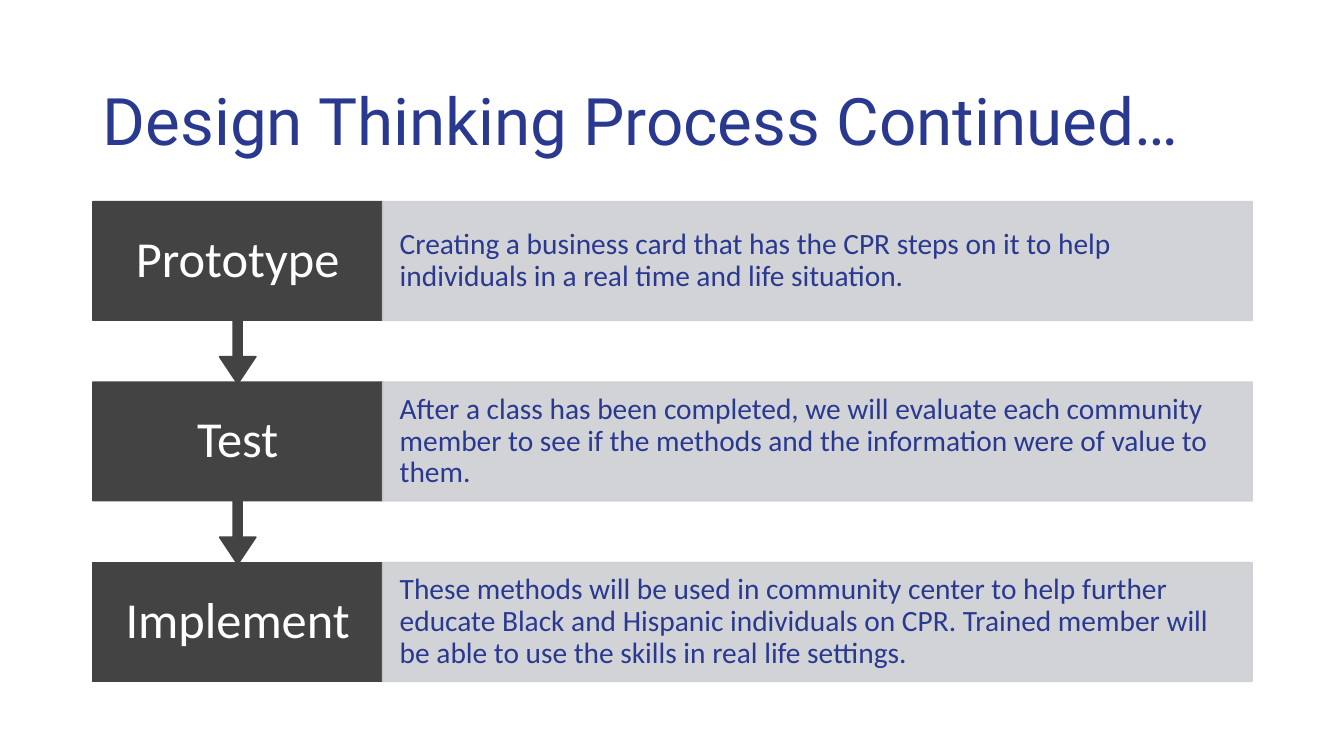
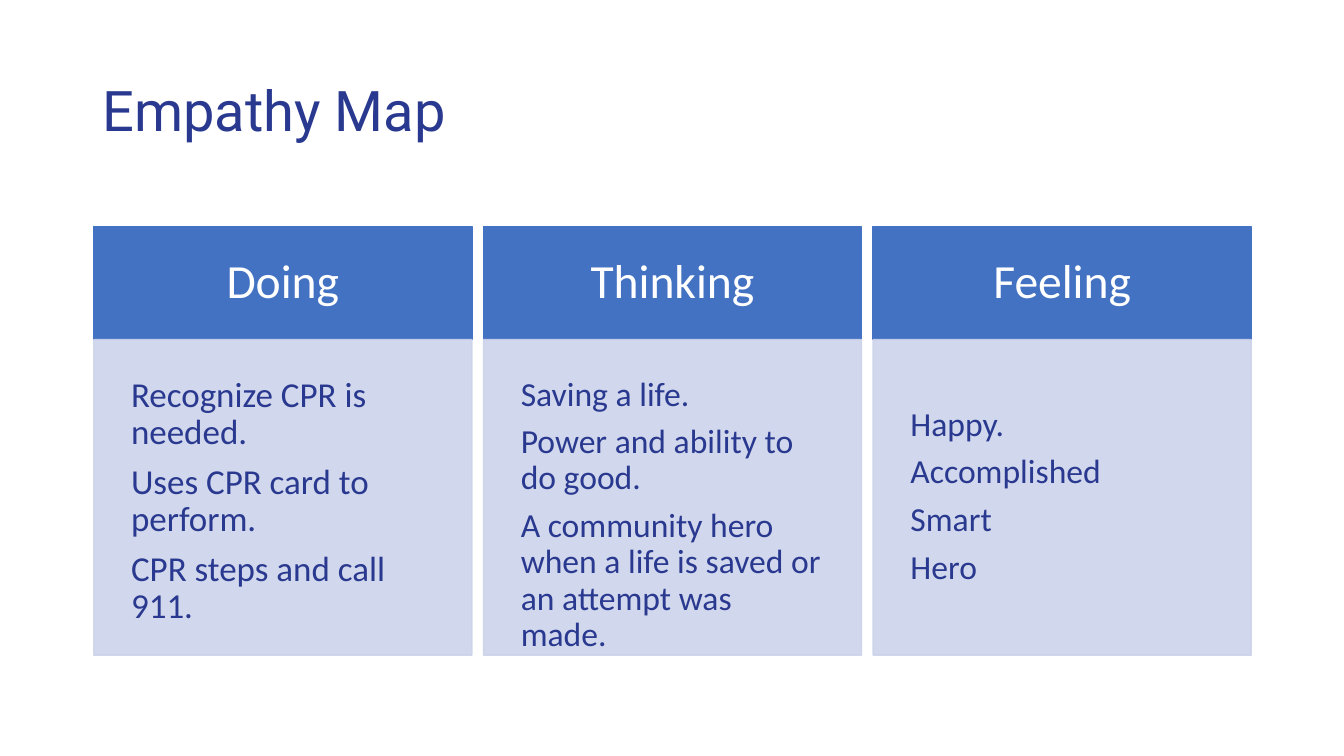
import dataclasses

import pptx
import pptx.dml.color
import pptx.enum.shapes
import pptx.enum.text
import pptx.oxml.ns
import pptx.util
from lxml import etree

SHAPES = pptx.enum.shapes.MSO_SHAPE
ALIGN = pptx.enum.text.PP_ALIGN
ANCHOR = pptx.enum.text.MSO_ANCHOR

# Shared look
INK, WHITE = "2A3990", "FFFFFF"
STEP_DARK, STEP_PALE = "434343", "CDCFD3"
MAP_BLUE, MAP_PALE = "4372C3", "CCD3EA"
TITLE_FONT, BODY_FONT = "Roboto", "Calibri"
PALE_OPACITY = 90
SLIDE_W, SLIDE_H = 13.33, 7.5
MARGIN, CONTENT_W = 0.92, 11.5
TITLE_BOTTOM = 1.85

# Process grid: label takes a quarter of each row, the text the rest
LABEL_W = CONTENT_W / 4
STEP_TOP, STEP_H, STEP_PITCH = 2.0, 1.18, 1.79
CALLOUT_H = 1.81
CALLOUT_SHAPE = (0.05, 0.1, 0.15, 0.65)

# Empathy grid: equal columns with a narrow gap
MAP_LEFT, MAP_TOP = 0.93, 2.25
COLUMN_W, COLUMN_GAP = 3.75, 0.115
HEAD_H, LIST_H = 1.12, 3.13
LIST_INSET = 0.37


@dataclasses.dataclass(frozen=True)
class Box:
    left: float
    top: float
    width: float
    height: float

    def emu(self) -> list[int]:
        return [pptx.util.Inches(v) for v in dataclasses.astuple(self)]


@dataclasses.dataclass(frozen=True)
class TextStyle:
    size: float
    color: str = INK
    font: str = BODY_FONT
    align: ALIGN = ALIGN.LEFT
    anchor: ANCHOR = ANCHOR.MIDDLE
    inset_x: float = 0.1
    inset_y: float = 0.05


@dataclasses.dataclass(frozen=True)
class Step:
    name: str
    detail: str


@dataclasses.dataclass(frozen=True)
class MapColumn:
    heading: str
    points: tuple[str, ...]
    size: float
    drop: float = 0


STEP_LABEL = TextStyle(36, WHITE, align=ALIGN.CENTER, inset_x=0.2, inset_y=0.28)
STEP_DETAIL = TextStyle(21, inset_x=0.17, inset_y=0.21)
MAP_HEADING = TextStyle(34, WHITE, align=ALIGN.CENTER, inset_x=0.3, inset_y=0.3)

STEPS = (
    Step("Prototype", "Creating a business card that has the CPR steps on it to "
         "help individuals in a real time and life situation."),
    Step("Test", "After a class has been completed, we will evaluate each "
         "community member to see if the methods and the information were of "
         "value to them."),
    Step("Implement", "These methods will be used in community center to help "
         "further educate Black and Hispanic individuals on CPR. Trained member "
         "will be able to use the skills in real life settings."),
)
MAP_COLUMNS = (
    MapColumn("Doing", ("Recognize CPR is needed.", "Uses CPR card to perform.",
                        "CPR steps and call 911."), 25),
    MapColumn("Thinking", ("Saving a life.", "Power and ability to do good.",
                           "A community hero when a life is saved or an attempt "
                           "was made."), 24),
    MapColumn("Feeling", ("Happy.", "Accomplished", "Smart", "Hero"), 24, drop=0.3),
)


def rgb(value: str) -> pptx.dml.color.RGBColor:
    return pptx.dml.color.RGBColor.from_string(value)


def write(shape, style: TextStyle, *paragraphs: str) -> None:
    frame = shape.text_frame
    frame.word_wrap = True
    frame.vertical_anchor = style.anchor
    frame.margin_left = frame.margin_right = pptx.util.Inches(style.inset_x)
    frame.margin_top = frame.margin_bottom = pptx.util.Inches(style.inset_y)
    for index, text in enumerate(paragraphs):
        paragraph = frame.add_paragraph() if index else frame.paragraphs[0]
        paragraph.alignment = style.align
        paragraph.line_spacing = 0.9
        if index:
            paragraph.space_before = pptx.util.Pt(8.1)
        run = paragraph.add_run()
        run.text = text
        run.font.name = style.font
        run.font.size = pptx.util.Pt(style.size)
        run.font.color.rgb = rgb(style.color)


def add_text(slide, box: Box, style: TextStyle, *paragraphs: str) -> None:
    write(slide.shapes.add_textbox(*box.emu()), style, *paragraphs)


def add_panel(slide, box: Box, color: str, opacity: int = 100,
              kind: SHAPES = SHAPES.RECTANGLE):
    panel = slide.shapes.add_shape(kind, *box.emu())
    panel.shadow.inherit = False
    panel.fill.solid()
    panel.fill.fore_color.rgb = rgb(color)
    panel.line.color.rgb = rgb(color)
    panel.line.width = pptx.util.Pt(1)
    if opacity < 100:
        qn = pptx.oxml.ns.qn
        for tint in panel.element.spPr.iter(qn("a:srgbClr")):
            etree.SubElement(tint, qn("a:alpha")).set("val", str(opacity * 1000))
    return panel


def add_titled_slide(deck, title: str, size: float, top: float):
    slide = deck.slides.add_slide(deck.slide_layouts[6])
    box = Box(MARGIN, top, CONTENT_W, TITLE_BOTTOM - top)
    add_text(slide, box, TextStyle(size, font=TITLE_FONT), title)
    return slide


def add_step(slide, row: int, step: Step) -> None:
    top = STEP_TOP + row * STEP_PITCH
    label = Box(MARGIN, top, LABEL_W, STEP_H)
    if row == len(STEPS) - 1:
        add_panel(slide, label, STEP_DARK)
    else:
        # Turned upside down, so its arrow points at the next step
        callout = add_panel(slide, dataclasses.replace(label, height=CALLOUT_H),
                            STEP_DARK, kind=SHAPES.UP_ARROW_CALLOUT)
        callout.rotation = 180
        for index, share in enumerate(CALLOUT_SHAPE):
            callout.adjustments[index] = share
    add_text(slide, label, STEP_LABEL, step.name)

    detail = Box(MARGIN + LABEL_W, top, CONTENT_W - LABEL_W, STEP_H)
    write(add_panel(slide, detail, STEP_PALE, PALE_OPACITY), STEP_DETAIL, step.detail)


def add_map_column(slide, index: int, column: MapColumn) -> None:
    left = MAP_LEFT + index * (COLUMN_W + COLUMN_GAP)
    heading = add_panel(slide, Box(left, MAP_TOP, COLUMN_W, HEAD_H), MAP_BLUE)
    write(heading, MAP_HEADING, column.heading)

    points = add_panel(slide, Box(left, MAP_TOP + HEAD_H, COLUMN_W, LIST_H),
                       MAP_PALE, PALE_OPACITY)
    style = TextStyle(column.size, anchor=ANCHOR.TOP, inset_x=LIST_INSET,
                      inset_y=LIST_INSET + column.drop)
    write(points, style, *column.points)


def main() -> None:
    deck = pptx.Presentation()
    deck.slide_width = pptx.util.Inches(SLIDE_W)
    deck.slide_height = pptx.util.Inches(SLIDE_H)

    # Design process: last step first, so each arrow overlaps the step below
    process = add_titled_slide(deck, "Design Thinking Process Continued…", 46.8, 0.61)
    for row, step in reversed(list(enumerate(STEPS))):
        add_step(process, row, step)

    # Empathy map
    empathy = add_titled_slide(deck, "Empathy Map", 40, 0.4)
    for index, column in enumerate(MAP_COLUMNS):
        add_map_column(empathy, index, column)

    deck.save("out.pptx")


if __name__ == "__main__":
    main()
